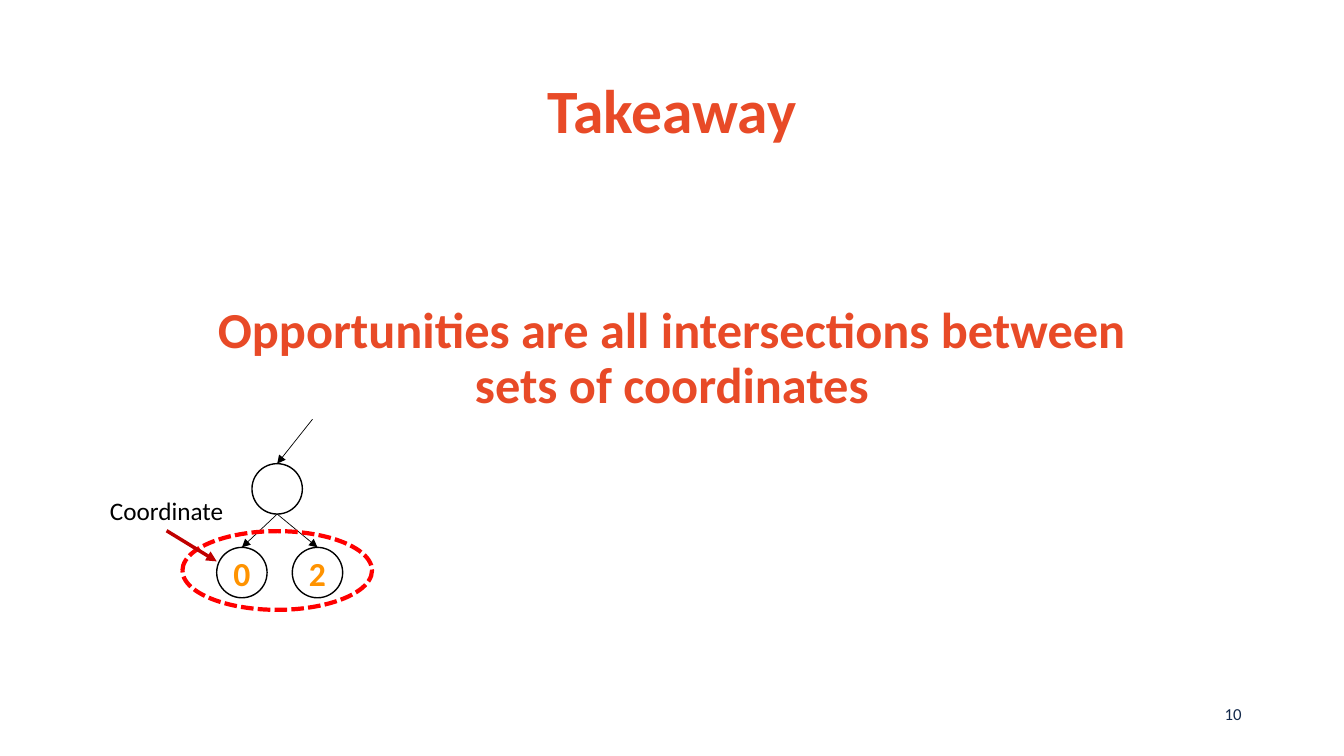
from dataclasses import dataclass

from lxml import etree
from pptx import Presentation
from pptx.dml.color import RGBColor
from pptx.enum import dml, shapes, text
from pptx.oxml.ns import qn
from pptx.util import Pt

COLORS = {
    "orange": "E84A27",
    "navy": "13294B",
    "amber": "FF9300",
    "black": "000000",
    "red": "FF0000",
    "dark red": "C00000",
}
FONT = "Calibri"
NODE_SIZE = 36


@dataclass
class Label:
    content: str
    left: float
    top: float
    width: float
    height: float
    size: float
    color: str
    bold: bool = False
    align: text.PP_ALIGN = text.PP_ALIGN.CENTER
    anchor: text.MSO_ANCHOR = text.MSO_ANCHOR.TOP
    line_spacing: float = 1.0


@dataclass
class Node:
    content: str
    left: float
    top: float


@dataclass
class Arrow:
    start: tuple[float, float]
    end: tuple[float, float]
    color: str = "black"
    weight: float = 0.5


TITLE = Label("Takeaway", 66, 28.8, 828, 104.4, 44, "orange", bold=True,
              anchor=text.MSO_ANCHOR.MIDDLE, line_spacing=0.9)
STATEMENT = Label("Opportunities are all intersections between sets of coordinates",
                  144, 214.5, 672, 139, 36, "orange", bold=True, line_spacing=0.9)
SLIDE_NUMBER = Label("10", 678, 495.4, 216, 28.8, 12, "navy",
                     align=text.PP_ALIGN.RIGHT, anchor=text.MSO_ANCHOR.MIDDLE)
COORDINATE = Label("Coordinate", 66, 350, 106, 29.1, 18, "black")

ROOT = Node("", 180, 331.2)
LEAVES = [Node("0", 154.8, 391), Node("2", 208.8, 391)]


def rgb(color: str) -> RGBColor:
    return RGBColor.from_string(COLORS[color])


def node_top(node: Node) -> tuple[float, float]:
    return node.left + NODE_SIZE / 2, node.top


def node_bottom(node: Node) -> tuple[float, float]:
    return node.left + NODE_SIZE / 2, node.top + NODE_SIZE


def style_paragraph(paragraph, size: float, color: str, bold: bool) -> None:
    paragraph.font.name = FONT
    paragraph.font.size = Pt(size)
    paragraph.font.bold = bold
    paragraph.font.color.rgb = rgb(color)


def add_label(slide, label: Label):
    shape = slide.shapes.add_textbox(Pt(label.left), Pt(label.top),
                                     Pt(label.width), Pt(label.height))
    frame = shape.text_frame
    frame.word_wrap = True
    frame.vertical_anchor = label.anchor
    paragraph = frame.paragraphs[0]
    paragraph.text = label.content
    paragraph.alignment = label.align
    paragraph.line_spacing = label.line_spacing
    style_paragraph(paragraph, label.size, label.color, label.bold)
    return shape


def add_ellipse(slide, left: float, top: float, width: float, height: float,
                color: str, weight: float):
    shape = slide.shapes.add_shape(shapes.MSO_SHAPE.OVAL, Pt(left), Pt(top),
                                   Pt(width), Pt(height))
    shape.shadow.inherit = False
    shape.fill.background()
    shape.line.color.rgb = rgb(color)
    shape.line.width = Pt(weight)
    return shape


def add_node(slide, node: Node) -> None:
    shape = add_ellipse(slide, node.left, node.top, NODE_SIZE, NODE_SIZE, "black", 1)
    if not node.content:
        return
    frame = shape.text_frame
    frame.margin_left = frame.margin_right = frame.margin_top = frame.margin_bottom = 0
    frame.word_wrap = False
    frame.vertical_anchor = text.MSO_ANCHOR.MIDDLE
    paragraph = frame.paragraphs[0]
    paragraph.text = node.content
    paragraph.alignment = text.PP_ALIGN.CENTER
    style_paragraph(paragraph, 24, "amber", True)


def add_arrow(slide, arrow: Arrow):
    connector = slide.shapes.add_connector(
        shapes.MSO_CONNECTOR.STRAIGHT, *(Pt(value) for value in arrow.start + arrow.end))
    connector.line.color.rgb = rgb(arrow.color)
    connector.line.width = Pt(arrow.weight)
    line = connector.line._get_or_add_ln()
    etree.SubElement(line, qn("a:tailEnd"), type="triangle")
    etree.SubElement(connector._element.spPr, qn("a:effectLst"))
    return connector


def main() -> None:
    presentation = Presentation()
    presentation.slide_width = Pt(960)
    presentation.slide_height = Pt(540)
    slide = presentation.slides.add_slide(presentation.slide_layouts[6])

    # Title, statement and slide number
    for label in (TITLE, STATEMENT, SLIDE_NUMBER):
        add_label(slide, label)

    # Tree
    for node in [*LEAVES, ROOT]:
        add_node(slide, node)
    for leaf in LEAVES:
        add_arrow(slide, Arrow(node_bottom(ROOT), node_top(leaf)))

    # Dashed ring around the set of coordinates
    ring = add_ellipse(slide, 130.3, 379.4, 135.4, 56.2, "red", 3)
    ring.line.dash_style = dml.MSO_LINE.SQUARE_DOT

    # Arrow into the root
    add_arrow(slide, Arrow((223.2, 299.5), node_top(ROOT)))

    # Callout for one coordinate
    callout = add_label(slide, COORDINATE)
    callout.text_frame.auto_size = text.MSO_AUTO_SIZE.SHAPE_TO_FIT_TEXT
    pointer = add_arrow(slide, Arrow((119, 379.1), (154.8, 401), "dark red", 2.5))
    pointer.begin_connect(callout, 2)

    presentation.save("out.pptx")


if __name__ == "__main__":
    main()
